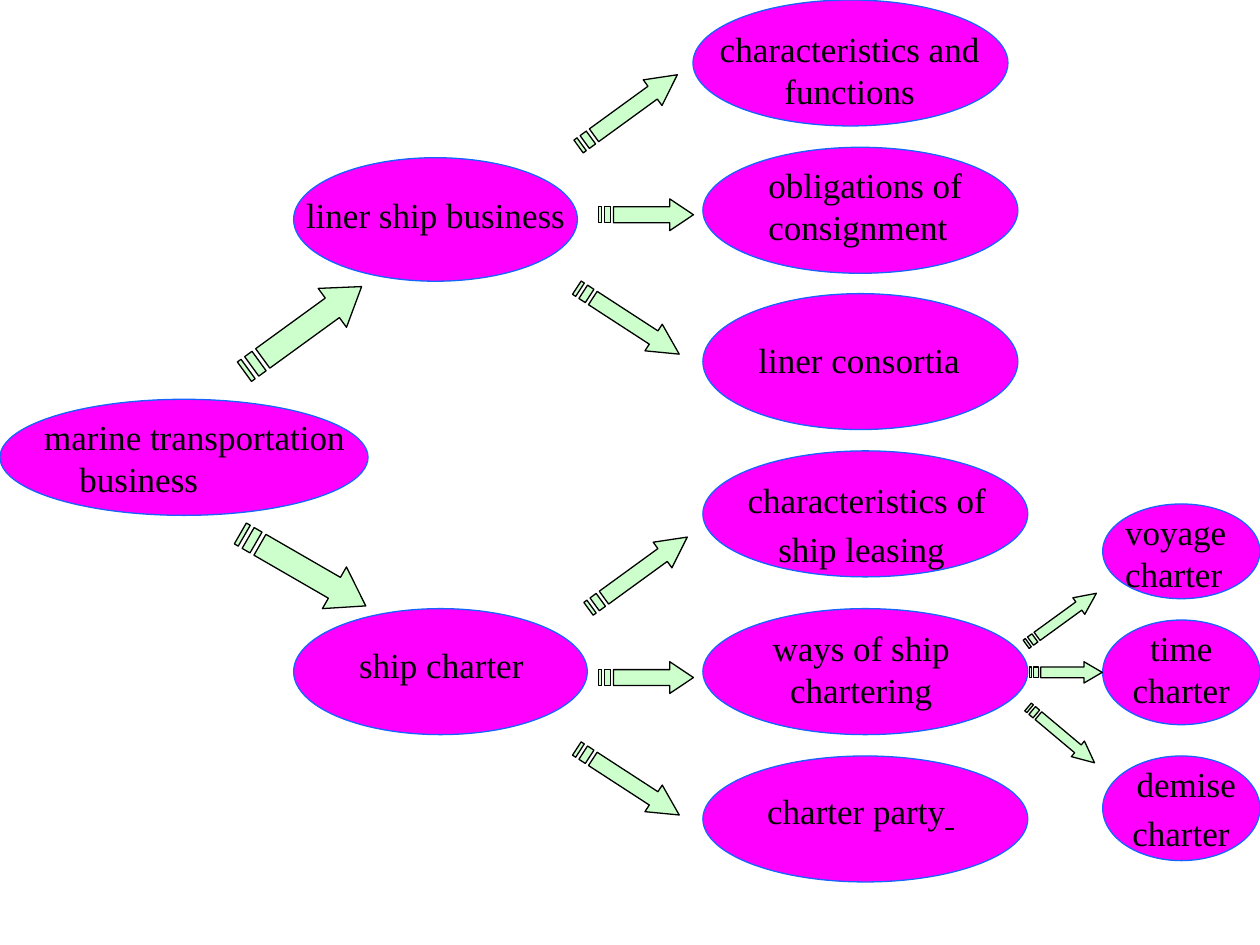
from pptx import Presentation
from pptx.dml.color import RGBColor
from pptx.enum.shapes import MSO_SHAPE
from pptx.enum.text import PP_ALIGN as AL
from pptx.util import Cm, Pt

COLORS = {"node": "FF00FF", "node_line": "1764FF", "arrow": "CCFFCC", "ink": "000000"}
FONT = "Times New Roman"

prs = Presentation()
prs.slide_width, prs.slide_height = Cm(25.4), Cm(19.05)
s = prs.slides.add_slide(prs.slide_layouts[6])


def paint(sp, fill, line):
    sp.shadow.inherit = False
    sp.fill.solid()
    sp.fill.fore_color.rgb = RGBColor.from_string(COLORS[fill])
    sp.line.color.rgb = RGBColor.from_string(COLORS[line])
    sp.line.width = Pt(0.75)


def write(tf, text, align=AL.LEFT, hanging=0, tail_size=None, tail_underline=False):
    """Write one paragraph; a tail is a closing space with its own format."""
    tf.word_wrap = True
    p = tf.paragraphs[0]
    p.alignment = align
    if hanging:
        pPr = p._p.get_or_add_pPr()
        pPr.set("marL", str(Cm(hanging)))
        pPr.set("indent", str(-Cm(hanging)))
    runs = [(text, 20, None)]
    if tail_size or tail_underline:
        runs.append((" ", tail_size or 20, tail_underline or None))
    for words, size, underline in runs:
        r = p.add_run()
        r.text = words
        r.font.name, r.font.size, r.font.underline = FONT, Pt(size), underline
        r.font.color.rgb = RGBColor.from_string(COLORS["ink"])


# Label, ellipse box, text box, text format
centred = {"align": AL.CENTER}
nodes = [
    ("liner ship business", (5.92, 3.18, 5.72, 2.49), (5.92, 3.78, 6.98, 2.54), {}),
    ("ship charter", (5.92, 12.27, 5.92, 2.54), (6.99, 12.7, 5.28, 1.27), {"tail_size": 24}),
    ("demise charter", (22.23, 15.24, 3.17, 2.11), (22.43, 15.24, 2.97, 2.11),
     {**centred, "tail_size": 24}),
    ("marine transportation business", (0, 8.05, 7.42, 2.34), (0.64, 8.26, 6.99, 1.96),
     {"hanging": 0.71}),
    ("voyage charter", (22.23, 10.16, 3.17, 1.91), (22.43, 10.16, 2.97, 1.91), {}),
    ("time charter", (22.23, 12.5, 3.17, 2.11), (22.23, 12.5, 3.17, 2.11), centred),
    ("characteristics and functions", (13.97, 0, 6.35, 2.54), (14.17, 0.43, 5.92, 2.11), centred),
    ("obligations of consignment", (14.17, 2.97, 6.35, 2.54), (15.24, 3.18, 6.35, 2.11), {}),
    ("liner consortia", (14.17, 5.92, 6.35, 2.74), (15.04, 6.55, 6.35, 1.27), {"tail_size": 24}),
    ("characteristics of ship leasing", (14.17, 9.09, 6.55, 2.54), (14.5, 9.53, 5.95, 2.11),
     {**centred, "tail_size": 24}),
    ("ways of ship chartering", (14.17, 12.27, 6.55, 2.54), (14.4, 12.5, 5.92, 2.11), centred),
    ("charter party", (14.17, 15.24, 6.55, 2.54), (14.63, 15.8, 5.44, 1.27),
     {**centred, "tail_underline": True}),
]
for label, oval_box, text_box, fmt in nodes:
    group = s.shapes.add_group_shape()
    oval = group.shapes.add_shape(MSO_SHAPE.OVAL, *map(Cm, oval_box))
    paint(oval, "node", "node_line")
    tb = group.shapes.add_textbox(*map(Cm, text_box))
    write(tb.text_frame, label, **fmt)

# Striped arrow outlines, as fractions of width and height
head = [(0.75, 1), (0.75, 0.75), (5 / 32, 0.75), (5 / 32, 0.25), (0.75, 0.25), (0.75, 0), (1, 0.5)]
stripes = [[(a, 0.75), (a, 0.25), (b, 0.25), (b, 0.75)] for a, b in ((1 / 16, 1 / 8), (0, 1 / 32))]

# Left, top, width, height, rotation
arrows = [
    (4.65, 6.15, 2.92, 0.97, -36),
    (4.65, 11, 2.92, 0.97, 30),
    (11.43, 1.91, 2.46, 0.64, -36),
    (11.63, 11.23, 2.46, 0.64, -36),
    (12.07, 4.01, 1.91, 0.64, 0),
    (12.07, 13.34, 1.91, 0.64, 0),
    (11.43, 6.15, 2.46, 0.64, 33),
    (11.43, 15.44, 2.46, 0.64, 33),
    (20.52, 12.27, 1.75, 0.41, -36),
    (20.75, 13.34, 1.47, 0.43, 0),
    (20.52, 14.61, 1.75, 0.41, 40),
]
for x, y, w, h, angle in arrows:
    outlines = [[(Cm(x + fx * w), Cm(y + fy * h)) for fx, fy in part] for part in [head, *stripes]]
    fb = s.shapes.build_freeform(*outlines[0][0])
    fb.add_line_segments(outlines[0][1:])
    for stripe in outlines[1:]:
        fb.move_to(*stripe[0])
        fb.add_line_segments(stripe[1:])
    arrow = fb.convert_to_shape()
    arrow.rotation = angle
    paint(arrow, "arrow", "ink")

prs.save("out.pptx")
